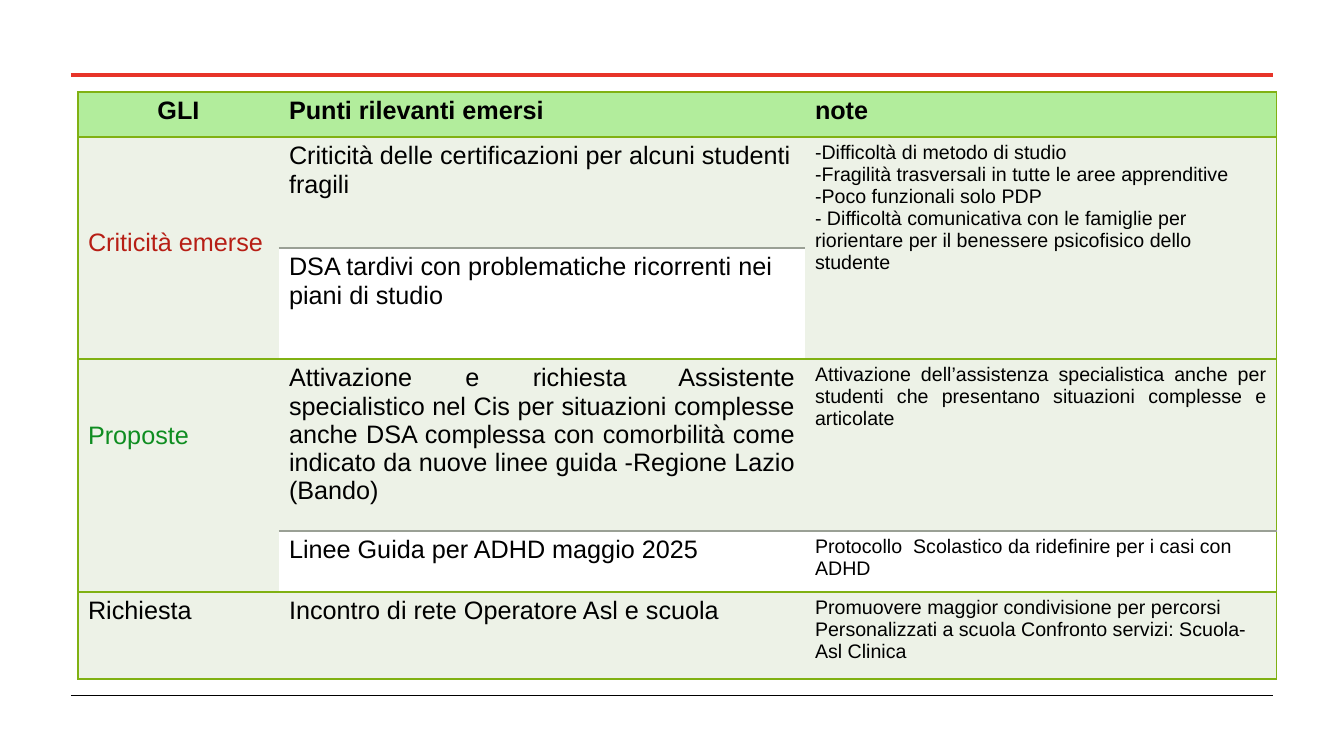
from lxml import etree
from pptx import Presentation
from pptx import util as u
from pptx.dml.color import RGBColor
from pptx.enum import shapes, text
from pptx.oxml.ns import qn

BLACK = RGBColor(0x00, 0x00, 0x00)
WHITE = RGBColor(0xFF, 0xFF, 0xFF)
RED_RULE = RGBColor(0xE7, 0x34, 0x29)
RED = RGBColor(0xB7, 0x1E, 0x15)
GREEN = RGBColor(0x0F, 0x8D, 0x21)
BORDER = RGBColor(0x80, 0xB1, 0x13)
DIVIDER = RGBColor(0x9A, 0xA0, 0x95)
HEADER = RGBColor(0xB2, 0xED, 0x9C)
PALE = RGBColor(0xED, 0xF2, 0xE7)

ROWS = [
    ["GLI", "Punti rilevanti emersi", "note"],
    ["Criticità emerse",
     "Criticità delle certificazioni per alcuni studenti fragili",
     "-Difficoltà di metodo di studio\n"
     "-Fragilità trasversali in tutte le aree apprenditive\n"
     "-Poco funzionali solo PDP\n"
     "- Difficoltà comunicativa con le famiglie per riorientare per il benessere "
     "psicofisico dello studente"],
    [None, "DSA tardivi con problematiche ricorrenti nei piani di studio", None],
    ["Proposte",
     "Attivazione e richiesta Assistente specialistico nel Cis per situazioni complesse "
     "anche DSA complessa con comorbilità come indicato da nuove linee guida "
     "-Regione Lazio (Bando)",
     "Attivazione dell’assistenza specialistica anche per studenti che presentano "
     "situazioni complesse e articolate"],
    [None, "Linee Guida per ADHD maggio 2025",
     "Protocollo  Scolastico da ridefinire per i casi con ADHD"],
    ["Richiesta", "Incontro di rete Operatore Asl e scuola",
     "Promuovere maggior condivisione per percorsi Personalizzati a scuola "
     "Confronto servizi: Scuola-Asl Clinica"],
]
COLUMN_WIDTHS = [201, 526, 472]
ROW_HEIGHTS = [45, 111, 111, 172, 61, 87]
TABLE_LEFT, TABLE_TOP = 78, 92
RULES = [(75, RED_RULE, 3), (695, BLACK, 0.5)]
RULE_LEFT, RULE_RIGHT = 71, 1273
LABEL_COLORS = {(1, 0): RED, (3, 0): GREEN}
LABEL_TOPS = {(1, 0): 92, (3, 0): 63}
ALIGNMENTS = {(0, 0): text.PP_ALIGN.CENTER,
              (3, 1): text.PP_ALIGN.JUSTIFY,
              (3, 2): text.PP_ALIGN.JUSTIFY}
SUB_ROWS = (2, 4)
ROW_FILLS = {0: HEADER, 2: WHITE, 4: WHITE}


def px(length):
    return u.Emu(round(length * 914400 / 100.8))


def set_border(cell, side, color):
    edge = etree.SubElement(cell._tc.get_or_add_tcPr(), qn("a:ln" + side), w="12700")
    if color is None:
        etree.SubElement(edge, qn("a:noFill"))
    else:
        solid = etree.SubElement(edge, qn("a:solidFill"))
        etree.SubElement(solid, qn("a:srgbClr"), val=str(color))


def edge_above(row, column):
    if row not in SUB_ROWS:
        return BORDER
    return DIVIDER if ROWS[row][column] else None


def format_cell(cell, row, column):
    spans = row + 1 in SUB_ROWS and ROWS[row + 1][column] is None
    borders = {
        "L": BORDER if column == 0 else None,
        "R": BORDER if column == len(COLUMN_WIDTHS) - 1 else None,
        "T": edge_above(row, column),
        "B": BORDER if spans else edge_above(row + 1, column) if row + 1 < len(ROWS) else BORDER,
    }
    for side, color in borders.items():
        set_border(cell, side, color)
    cell.fill.solid()
    cell.fill.fore_color.rgb = ROW_FILLS.get(row, PALE)
    if ROWS[row][column] is None:
        return
    if (row, column) in LABEL_TOPS:
        cell.margin_top = px(LABEL_TOPS[row, column])
    cell.text_frame.text = ROWS[row][column]
    font_values = {"name": "Arial", "bold": row == 0,
                   "size": u.Pt(14 if column == 2 and row else 18)}
    for paragraph in cell.text_frame.paragraphs:
        paragraph.alignment = ALIGNMENTS.get((row, column), text.PP_ALIGN.LEFT)
        for run in paragraph.runs:
            for key, value in font_values.items():
                setattr(run.font, key, value)
            run.font.color.rgb = LABEL_COLORS.get((row, column), BLACK)


def add_rule(slide, y, color, width):
    rule = slide.shapes.add_connector(
        shapes.MSO_CONNECTOR.STRAIGHT, px(RULE_LEFT), px(y), px(RULE_RIGHT), px(y))
    rule.line.color.rgb = color
    rule.line.width = u.Pt(width)
    etree.SubElement(rule._element.spPr, qn("a:effectLst"))


def add_meeting_table(slide):
    table = slide.shapes.add_table(
        len(ROWS), len(COLUMN_WIDTHS), px(TABLE_LEFT), px(TABLE_TOP),
        px(sum(COLUMN_WIDTHS)), px(sum(ROW_HEIGHTS))).table
    table.first_row = table.horz_banding = False
    for column, width in zip(table.columns, COLUMN_WIDTHS):
        column.width = px(width)
    for row, height in zip(table.rows, ROW_HEIGHTS):
        row.height = px(height)
    for row, values in enumerate(ROWS):
        for column, value in enumerate(values):
            format_cell(table.cell(row, column), row, column)
            if value is None:
                table.cell(row - 1, column).merge(table.cell(row, column))


def main():
    deck = Presentation()
    deck.slide_width, deck.slide_height = px(1344), px(756)
    slide = deck.slides.add_slide(deck.slide_layouts[6])
    for rule in RULES:
        add_rule(slide, *rule)
    add_meeting_table(slide)
    deck.save("out.pptx")


if __name__ == "__main__":
    main()
